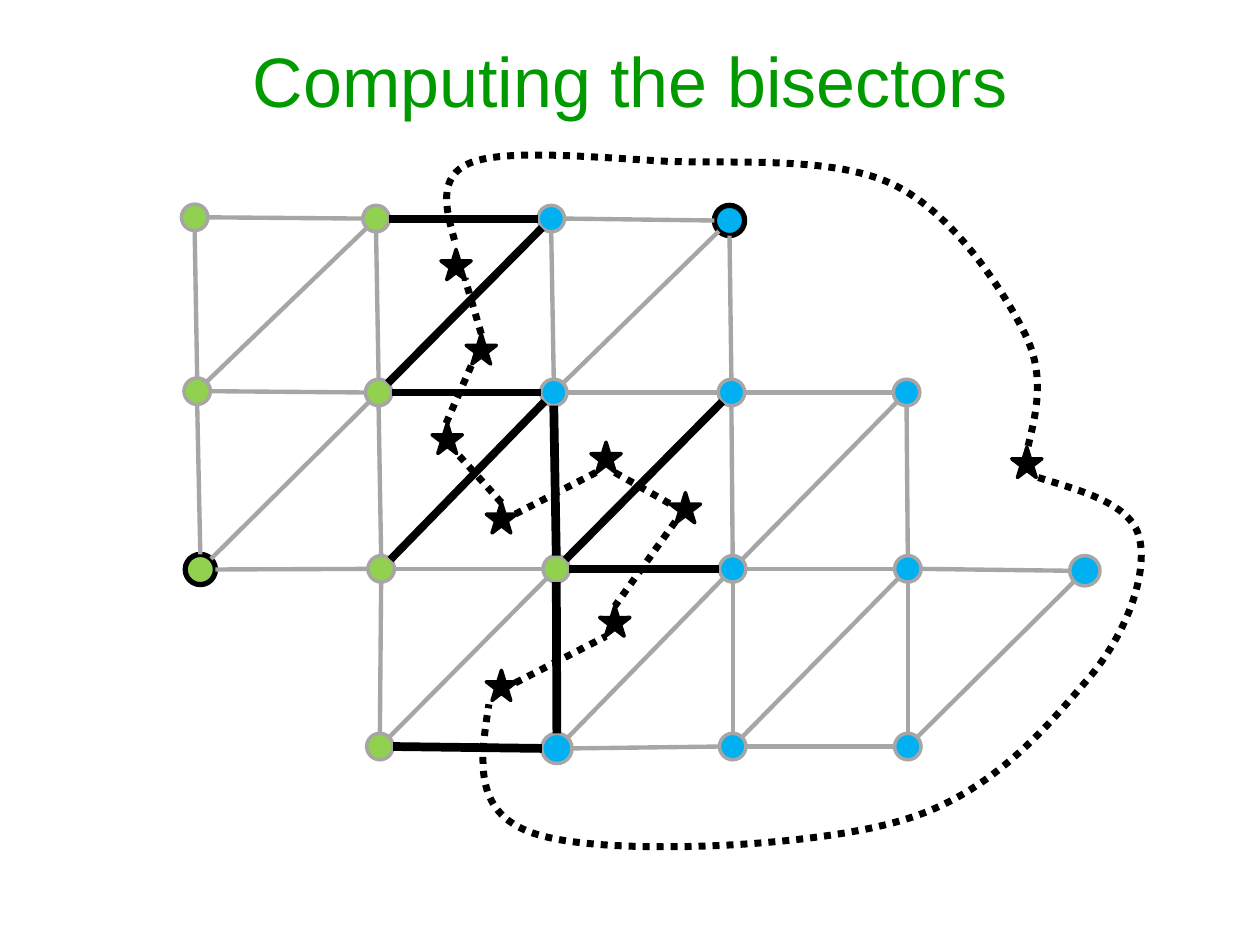
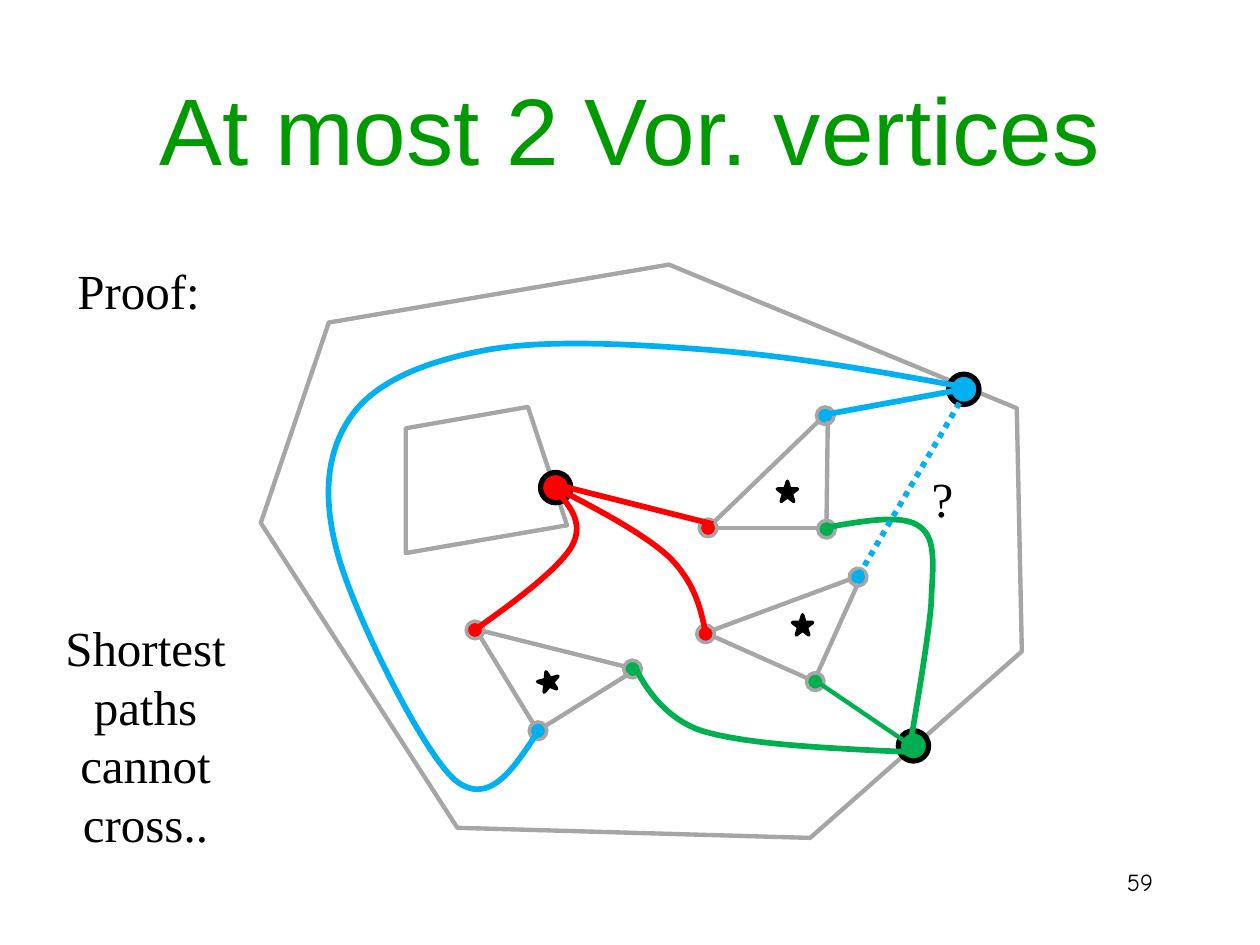
import dataclasses

import pptx
import pptx.dml.color
import pptx.enum.dml
import pptx.enum.shapes
import pptx.enum.text
import pptx.oxml
import pptx.oxml.ns
import pptx.util

Inches = pptx.util.Inches
SHAPE = pptx.enum.shapes.MSO_SHAPE
ALIGN = pptx.enum.text.PP_ALIGN
ANCHOR = pptx.enum.text.MSO_ANCHOR


@dataclasses.dataclass(frozen=True)
class Theme:
    title: str = "009900"
    ink: str = "000000"
    mesh: str = "A6A6A6"
    blue: str = "00B0F0"
    lime: str = "92D050"
    green: str = "00B050"
    red: str = "FF0000"
    title_font: str = "Arial"
    body_font: str = "Times New Roman"
    number_font: str = "Comic Neue"
    body_size: int = 28
    number_size: int = 14
    mesh_width: float = 2.5
    path_width: float = 3.25
    bisector_width: float = 4
    small_rim: float = 2
    site_rim: float = 3


T = Theme()

BISECTOR_TITLE = ("Computing the bisectors", 0.01, 40)
VERTICES = {
    (0, 0): (1.44, 1.62, T.lime), (0, 1): (2.88, 1.63, T.lime),
    (0, 2): (4.27, 1.63, T.blue), (0, 3): (5.67, 1.63, T.blue),
    (1, 0): (1.46, 3.0, T.lime), (1, 1): (2.9, 3.01, T.lime),
    (1, 2): (4.29, 3.01, T.blue), (1, 3): (5.7, 3.01, T.blue),
    (1, 4): (7.09, 3.01, T.blue),
    (2, 0): (1.47, 4.4, T.lime), (2, 1): (2.92, 4.41, T.lime),
    (2, 2): (4.31, 4.41, T.lime), (2, 3): (5.71, 4.41, T.blue),
    (2, 4): (7.1, 4.41, T.blue), (2, 5): (8.49, 4.41, T.blue),
    (3, 1): (2.91, 5.82, T.lime), (3, 2): (4.3, 5.82, T.blue),
    (3, 3): (5.71, 5.82, T.blue), (3, 4): (7.1, 5.82, T.blue),
}
SITES = {(0, 3), (2, 0)}
LARGE_VERTICES = SITES | {(2, 5), (3, 2)}
NEIGHBOUR_STEPS = [(0, 1), (1, 0), (1, -1)]
FACES = [(8.03, 3.55), (5.32, 3.91), (4.76, 4.81), (3.86, 5.32), (3.86, 3.99),
         (3.43, 3.36), (3.7, 2.65), (3.5, 1.98), (4.69, 3.51)]
DUAL_EDGES = [
    ((4.09, 5.42), (4.81, 5.05)), ((3.98, 3.99), (3.62, 3.59)),
    ((3.54, 3.36), (3.75, 2.88)), ((3.82, 2.65), (3.69, 2.21)),
    ((4.09, 4.08), (4.73, 3.75)), ((4.88, 3.75), (5.32, 4.0)),
    ((5.36, 4.14), (4.88, 4.81)),
]
OUTER_DUAL_EDGES = [
    [(8.16, 3.54), (8.23, 3.25), (8.3, 2.96), (8.12, 2.62),
     (7.94, 2.27), (7.55, 1.68), (7.08, 1.46),
     (6.61, 1.24), (5.85, 1.3), (5.29, 1.28),
     (4.73, 1.25), (4.02, 1.18), (3.74, 1.29),
     (3.46, 1.4), (3.54, 1.67), (3.62, 1.95)],
    [(8.24, 3.79), (8.6, 3.9), (8.97, 4.0), (9.04, 4.26),
     (9.11, 4.52), (8.97, 4.98), (8.66, 5.36),
     (8.34, 5.73), (7.89, 6.3), (7.16, 6.51),
     (6.43, 6.73), (4.84, 6.79), (4.29, 6.63),
     (3.74, 6.48), (3.81, 6.04), (3.88, 5.59)],
]

PROOF_TITLE = ("At most 2 Vor. vertices", 0.39, 54)
REMARKS = [
    ("Proof:", (0.47, 2.02, 1.26, 0.57)),
    ("Shortest paths cannot cross..", (0.39, 4.85, 1.53, 1.99)),
    ("?", (7.09, 3.67, 0.78, 0.57)),
]
PAGE_NUMBER = ("59", (7.17, 6.83, 2.08, 0.5))
BOUNDARY = [(2.07, 4.15), (2.61, 2.56), (5.31, 2.1), (8.07, 3.24),
            (8.11, 5.17), (6.43, 6.65), (3.63, 6.57)]
HOLE = [(3.22, 4.39), (3.22, 3.4), (4.19, 3.23), (4.5, 4.17)]
TRIANGLES = [
    {"corners": [(6.48, 3.23, T.blue), (6.49, 4.13, T.green), (5.55, 4.12, T.red)],
     "sides": [((5.69, 4.19), (6.49, 4.19)), ((5.67, 4.14), (6.5, 3.34)),
               ((6.56, 4.13), (6.57, 3.34))],
     "face": (6.17, 3.82), "star_turn": 0, "turn": 0},
    {"corners": [(4.95, 5.24, T.green), (4.2, 5.73, T.blue), (3.7, 4.93, T.red)],
     "sides": [((3.81, 5.05), (4.23, 5.74)), ((3.84, 5.01), (4.96, 5.29)),
               ((4.33, 5.76), (4.99, 5.35))],
     "face": (4.28, 5.33), "star_turn": 57.9, "turn": 57.9},
    {"corners": [(6.74, 4.51, T.blue), (6.4, 5.34, T.green), (5.53, 4.96, T.red)],
     "sides": [((5.66, 5.05), (6.4, 5.38)), ((5.66, 5.0), (6.74, 4.6)),
               ((6.49, 5.34), (6.81, 4.63))],
     "face": (6.29, 4.88), "star_turn": 0, "turn": 23.3},
]
VORONOI_SITES = [(7.53, 2.97, T.blue), (7.13, 5.8, T.green), (4.29, 3.75, T.red)]
SHORTEST_PATHS = [
    (T.red, T.path_width, [(4.43, 3.85), (5.66, 4.16)]),
    (T.red, T.path_width, [(4.44, 3.92), (4.54, 4.04), (4.64, 4.17), (4.53, 4.35),
                           (4.42, 4.52), (4.12, 4.75), (3.81, 4.97)]),
    (T.red, T.path_width, [(4.37, 3.85), (4.74, 4.04), (5.1, 4.23), (5.31, 4.42),
                           (5.51, 4.62), (5.56, 4.82), (5.6, 5.02)]),
    (T.green, T.path_width, [(6.59, 4.18), (6.88, 4.13), (7.17, 4.08), (7.3, 4.18),
                             (7.44, 4.28), (7.4, 4.51), (7.39, 4.79),
                             (7.37, 5.07), (7.23, 5.87), (7.23, 5.87)]),
    (T.green, T.mesh_width, [(6.47, 5.4), (7.22, 5.91)]),
    (T.green, T.path_width, [(7.25, 5.97), (6.59, 5.94), (5.93, 5.91), (5.57, 5.8),
                             (5.2, 5.68), (5.04, 5.29), (5.04, 5.29)]),
    (T.blue, T.path_width, [(7.64, 3.09), (6.55, 3.29)]),
    (T.blue, T.path_width, [(7.69, 3.08), (7.0, 2.95), (6.3, 2.83), (5.66, 2.78),
                            (5.02, 2.73), (4.33, 2.69), (3.85, 2.78),
                            (3.37, 2.87), (2.98, 3.03), (2.79, 3.3),
                            (2.59, 3.58), (2.55, 3.95), (2.69, 4.43),
                            (2.83, 4.91), (3.35, 5.96), (3.61, 6.19),
                            (3.88, 6.41), (4.08, 6.1), (4.28, 5.79)]),
]
DOUBTFUL_PATH = [(7.66, 3.12), (6.82, 4.56)]


def rgb(color):
    return pptx.dml.color.RGBColor.from_string(color)


def write(slide, text, box, font=T.body_font, size=T.body_size, color=T.ink,
          align=ALIGN.CENTER, anchor=ANCHOR.TOP):
    frame = slide.shapes.add_textbox(*map(Inches, box)).text_frame
    frame.word_wrap = True
    frame.vertical_anchor = anchor
    paragraph = frame.paragraphs[0]
    paragraph.alignment = align
    run = paragraph.add_run()
    run.text = text
    run.font.name = font
    run.font.size = pptx.util.Pt(size)
    run.font.color.rgb = rgb(color)


def write_title(slide, text, top, size):
    write(slide, text, (0.75, top, 8.5, 1.25), font=T.title_font, size=size,
          color=T.title, anchor=ANCHOR.MIDDLE)


def stroke(line, color, width, dotted=False):
    line.color.rgb = rgb(color)
    line.width = pptx.util.Pt(width)
    if dotted:
        line.dash_style = pptx.enum.dml.MSO_LINE.ROUND_DOT


def mark(slide, kind, left, top, size, fill, rim=T.mesh, rim_width=T.small_rim, turn=0):
    shape = slide.shapes.add_shape(kind, *map(Inches, (left, top, size, size)))
    shape.rotation = turn
    shape.fill.solid()
    shape.fill.fore_color.rgb = rgb(fill)
    stroke(shape.line, rim, rim_width)
    shape.shadow.inherit = False


def connect(slide, start, end, color=T.mesh, width=T.mesh_width, dotted=False):
    edge = slide.shapes.add_connector(pptx.enum.shapes.MSO_CONNECTOR.STRAIGHT,
                                      *map(Inches, (*start, *end)))
    stroke(edge.line, color, width, dotted)
    properties = edge._element.spPr
    properties.append(pptx.oxml.parse_xml(
        f"<a:effectLst {pptx.oxml.ns.nsdecls('a')}/>"))


def trace(slide, points, color=T.mesh, width=T.mesh_width, closed=False, dotted=False):
    start, *rest = [(Inches(x), Inches(y)) for x, y in points]
    builder = slide.shapes.build_freeform(*start, scale=1.0)
    builder.add_line_segments(rest, close=closed)
    outline = builder.convert_to_shape()
    outline.fill.background()
    stroke(outline.line, color, width, dotted)
    outline.shadow.inherit = False
    return outline


def curve_extent(controls, steps=24):
    extent = [controls[0]]
    for first in range(0, len(controls) - 1, 3):
        piece = controls[first:first + 4]
        for step in range(1, steps + 1):
            t = step / steps
            weights = ((1 - t) ** 3, 3 * t * (1 - t) ** 2, 3 * t * t * (1 - t), t ** 3)
            extent.append(tuple(sum(w * c[axis] for w, c in zip(weights, piece))
                                for axis in (0, 1)))
    return extent


def trace_curve(slide, controls, color, width, dotted=False):
    if len(controls) == 2:
        trace(slide, controls, color, width, dotted=dotted)
        return
    outline = trace(slide, curve_extent(controls), color, width, dotted=dotted)
    route = next(outline._element.iter(pptx.oxml.ns.qn("a:path")))
    for segment in list(route)[1:]:
        route.remove(segment)
    for first in range(1, len(controls), 3):
        corners = "".join(
            f'<a:pt x="{Inches(x) - outline.left}" y="{Inches(y) - outline.top}"/>'
            for x, y in controls[first:first + 3])
        route.append(pptx.oxml.parse_xml(
            f"<a:cubicBezTo {pptx.oxml.ns.nsdecls('a')}>{corners}</a:cubicBezTo>"))


def diameter(cell):
    return 0.24 if cell in LARGE_VERTICES else 0.21


def rim_point(cell, step):
    left, top, _ = VERTICES[cell]
    radius = diameter(cell) / 2
    down, right = step
    reach = radius / (down ** 2 + right ** 2) ** 0.5
    return left + radius + right * reach, top + radius + down * reach


def draw_mesh(slide):
    for cell, (left, top, color) in VERTICES.items():
        rim = (T.ink, T.site_rim) if cell in SITES else (T.mesh, T.small_rim)
        mark(slide, SHAPE.OVAL, left, top, diameter(cell), color, *rim)
    for cell, (_, _, color) in VERTICES.items():
        for down, right in NEIGHBOUR_STEPS:
            neighbour = (cell[0] + down, cell[1] + right)
            if neighbour not in VERTICES:
                continue
            ends = rim_point(cell, (down, right)), rim_point(neighbour, (-down, -right))
            if color == VERTICES[neighbour][2]:
                connect(slide, *ends)
            else:
                heavy = right == 0 or cell[0] == 3
                connect(slide, *ends, color=T.ink, width=5 if heavy else 4.5)


def build_bisectors(slide):
    write_title(slide, *BISECTOR_TITLE)
    draw_mesh(slide)
    for left, top in FACES:
        mark(slide, SHAPE.STAR_5_POINT, left, top, 0.24, T.ink, T.ink)
    for start, end in DUAL_EDGES:
        connect(slide, start, end, T.ink, T.bisector_width, dotted=True)
    for route in OUTER_DUAL_EDGES:
        trace_curve(slide, route, T.ink, T.bisector_width, dotted=True)


def build_proof(slide):
    write_title(slide, *PROOF_TITLE)
    number, number_box = PAGE_NUMBER
    write(slide, number, number_box, font=T.number_font, size=T.number_size,
          align=ALIGN.RIGHT)
    for polygon in (BOUNDARY, HOLE):
        trace(slide, polygon, closed=True)
    for triangle in TRIANGLES:
        for left, top, color in triangle["corners"]:
            mark(slide, SHAPE.OVAL, left, top, 0.14, color, turn=triangle["turn"])
        for start, end in triangle["sides"]:
            connect(slide, start, end)
        mark(slide, SHAPE.STAR_5_POINT, *triangle["face"], 0.16, T.ink, T.ink,
             turn=triangle["star_turn"])
    for left, top, color in VORONOI_SITES:
        mark(slide, SHAPE.OVAL, left, top, 0.24, color, T.ink, T.site_rim)
    for color, width, route in SHORTEST_PATHS:
        trace_curve(slide, route, color, width)
    trace_curve(slide, DOUBTFUL_PATH, T.blue, T.path_width, dotted=True)
    for remark, box in REMARKS:
        write(slide, remark, box)


def main():
    deck = pptx.Presentation()
    deck.slide_width, deck.slide_height = Inches(10), Inches(7.5)
    for build in (build_bisectors, build_proof):
        build(deck.slides.add_slide(deck.slide_layouts[6]))
    deck.save("out.pptx")


if __name__ == "__main__":
    main()
